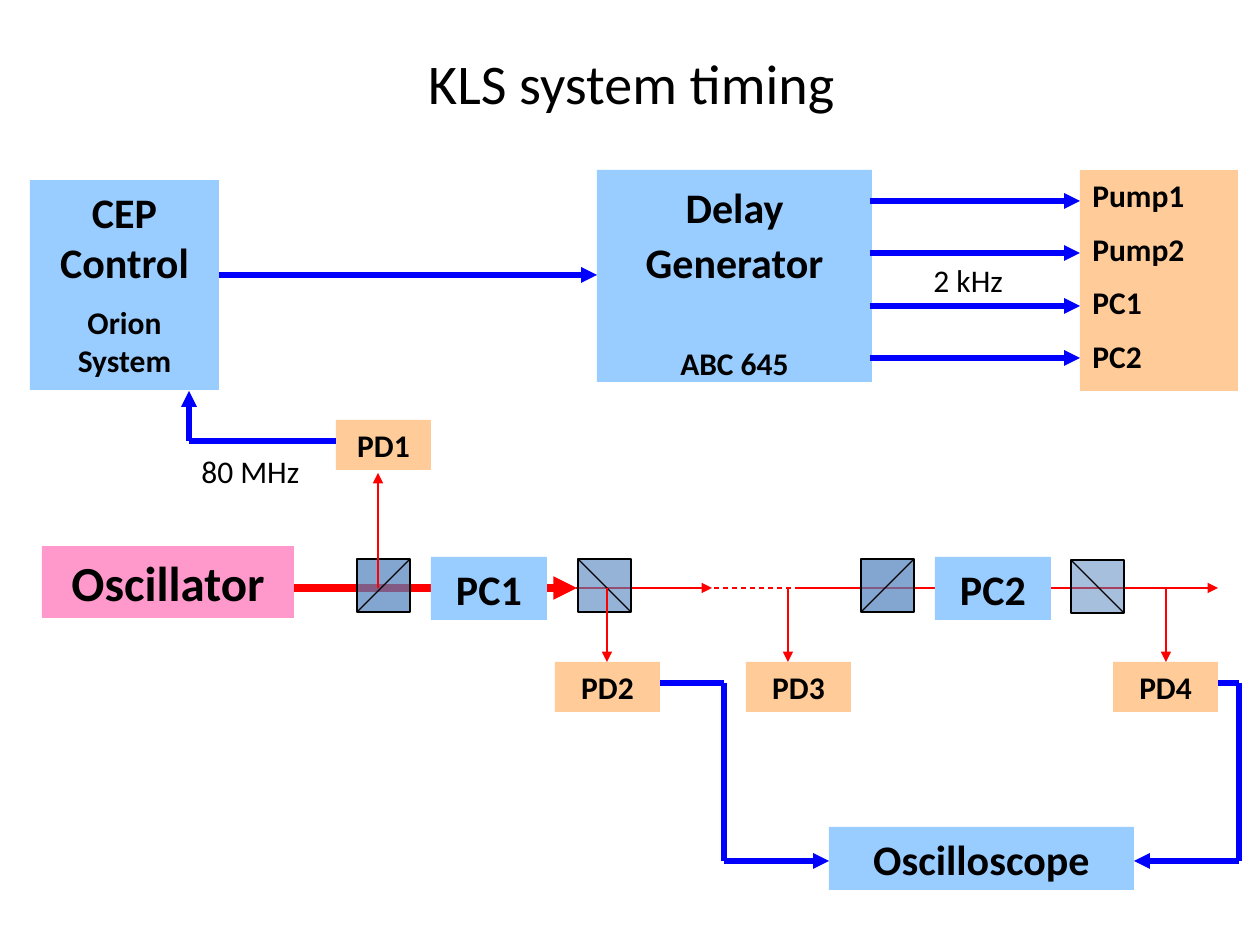
"""Build the KLS system timing diagram slide."""
from lxml import etree
from pptx import Presentation
from pptx import util as u
from pptx.dml.color import RGBColor
from pptx.enum import dml, shapes, text
from pptx.oxml.ns import qn

BLUE, RED, BLACK = "0000FF", "FF0000", "000000"
SKY, PEACH, PINK, GLASS = "99CCFF", "FFCC99", "FF99CC", "4F81BD"
BEAM_Y = 588


def color(value):
    return RGBColor.from_string(value)


def px(value):
    return u.Emu(round(value * 914400 / 126))


class Diagram:
    """Hold the style and the current slide of a block diagram."""

    font = "Calibri"

    def __init__(self, slide):
        self.slide = slide

    def set_text(self, shape, content, sizes, bold=False, align="CENTER", spacing=()):
        frame = shape.text_frame
        frame.word_wrap = True
        frame.vertical_anchor = text.MSO_ANCHOR.TOP
        frame.text = content
        for index, paragraph in enumerate(frame.paragraphs):
            size = sizes[min(index, len(sizes) - 1)]
            paragraph.alignment = getattr(text.PP_ALIGN, align)
            paragraph.space_before = u.Pt(size / 2 if index else 0)
            if spacing:
                paragraph.line_spacing = spacing[index]
            for run in paragraph.runs:
                run.font.name = self.font
                run.font.size = u.Pt(size)
                run.font.bold = bold
                run.font.color.rgb = color(BLACK)

    def title(self, content, left, top, width, height):
        shape = self.slide.shapes.title
        shape.left, shape.top = px(left), px(top)
        shape.width, shape.height = px(width), px(height)
        self.set_text(shape, content, [32])

    def rectangle(self, left, top, width, height, fill):
        shape = self.slide.shapes.add_shape(
            shapes.MSO_SHAPE.RECTANGLE, px(left), px(top), px(width), px(height))
        shape.shadow.inherit = False
        shape.fill.solid()
        shape.fill.fore_color.rgb = color(fill)
        shape.line.fill.background()
        return shape

    def box(self, content, left, top, width, height, fill, *sizes, **style):
        shape = self.rectangle(left, top, width, height, fill)
        self.set_text(shape, content, sizes, bold=True, **style)

    def label(self, content, left, top, width, height):
        shape = self.slide.shapes.add_textbox(px(left), px(top), px(width), px(height))
        self.set_text(shape, content, [18], align="LEFT")

    def line(self, start, end, stroke, weight, arrow=False, dashed=False):
        connector = self.slide.shapes.add_connector(
            shapes.MSO_CONNECTOR.STRAIGHT, *map(px, start + end))
        connector.line.color.rgb = color(stroke)
        connector.line.width = u.Pt(weight)
        if dashed:
            connector.line.dash_style = dml.MSO_LINE.DASH
        properties = connector._element.spPr
        if arrow:
            etree.SubElement(properties.find(qn("a:ln")), qn("a:tailEnd"), type="triangle")
        etree.SubElement(properties, qn("a:effectLst"))

    def cable(self, *points):
        for start, end in zip(points, points[1:]):
            self.line(start, end, BLUE, 3, arrow=end == points[-1])

    def splitter(self, left, top, opacity, rising):
        side = 53
        shape = self.rectangle(left, top, side, side, GLASS)
        shape.line.color.rgb = color(BLACK)
        shape.line.width = u.Pt(0.75)
        tint = shape._element.spPr.find(qn("a:solidFill"))[0]
        etree.SubElement(tint, qn("a:alpha"), val=str(opacity * 1000))
        near, far = (top + side, top) if rising else (top, top + side)
        self.line((left, near), (left + side, far), BLACK, 0.75)


def main():
    presentation = Presentation()
    presentation.slide_width, presentation.slide_height = u.Inches(10), u.Inches(7.5)
    diagram = Diagram(presentation.slides.add_slide(presentation.slide_layouts[5]))
    diagram.title("KLS system timing", 135, 42, 993, 81)

    for start, end, weight, arrow, dashed in (
            (798, 1218, 1, True, False), (294, 577, 4.5, True, False),
            (576, 712, 0.75, True, False), (714, 798, 0.75, False, True)):
        diagram.line((start, BEAM_Y), (end, BEAM_Y), RED, weight, arrow, dashed)
    for left, top, opacity, rising in (
            (357, 559, 70, True), (578, 559, 60, False),
            (861, 559, 70, True), (1071, 560, 50, False)):
        diagram.splitter(left, top, opacity, rising)
    diagram.box("Oscillator", 42, 546, 252, 72, PINK, 28)
    for name, left in (("PC1", 431), ("PC2", 935)):
        diagram.box(name, left, 557, 116, 63, SKY, 24)

    diagram.box("PD1", 336, 420, 95, 50, PEACH, 18)
    diagram.line((378, BEAM_Y), (378, 473), RED, 0.75, arrow=True)
    for name, left, tap in (("PD2", 555, 607), ("PD3", 746, 788), ("PD4", 1113, 1166)):
        diagram.box(name, left, 662, 105, 50, PEACH, 18)
        diagram.line((tap, BEAM_Y), (tap, 662), RED, 0.75, arrow=True)

    diagram.box("CEP Control\nOrion System", 30, 180, 189, 210, SKY, 24, 18)
    diagram.box("Delay Generator\nABC 645", 597, 170, 275, 212, SKY, 24, 18,
                spacing=(1.1, 2.1))
    diagram.box("Pump1\nPump2\nPC1\nPC2", 1080, 170, 158, 221, PEACH, 18, align="LEFT")
    diagram.box("Oscilloscope", 829, 827, 305, 63, SKY, 24)

    diagram.cable((336, 441), (189, 441), (189, 391))
    diagram.cable((219, 275), (597, 275))
    for channel in range(4):
        height = 201 + channel * 105 // 2
        diagram.cable((870, height), (1080, height))
    diagram.cable((660, 683), (724, 683), (724, 861), (829, 861))
    diagram.cable((1218, 683), (1239, 683), (1239, 861), (1134, 861))
    diagram.label("80 MHz", 189, 446, 199, 50)
    diagram.label("2 kHz", 921, 255, 97, 50)
    presentation.save("out.pptx")


if __name__ == "__main__":
    main()
